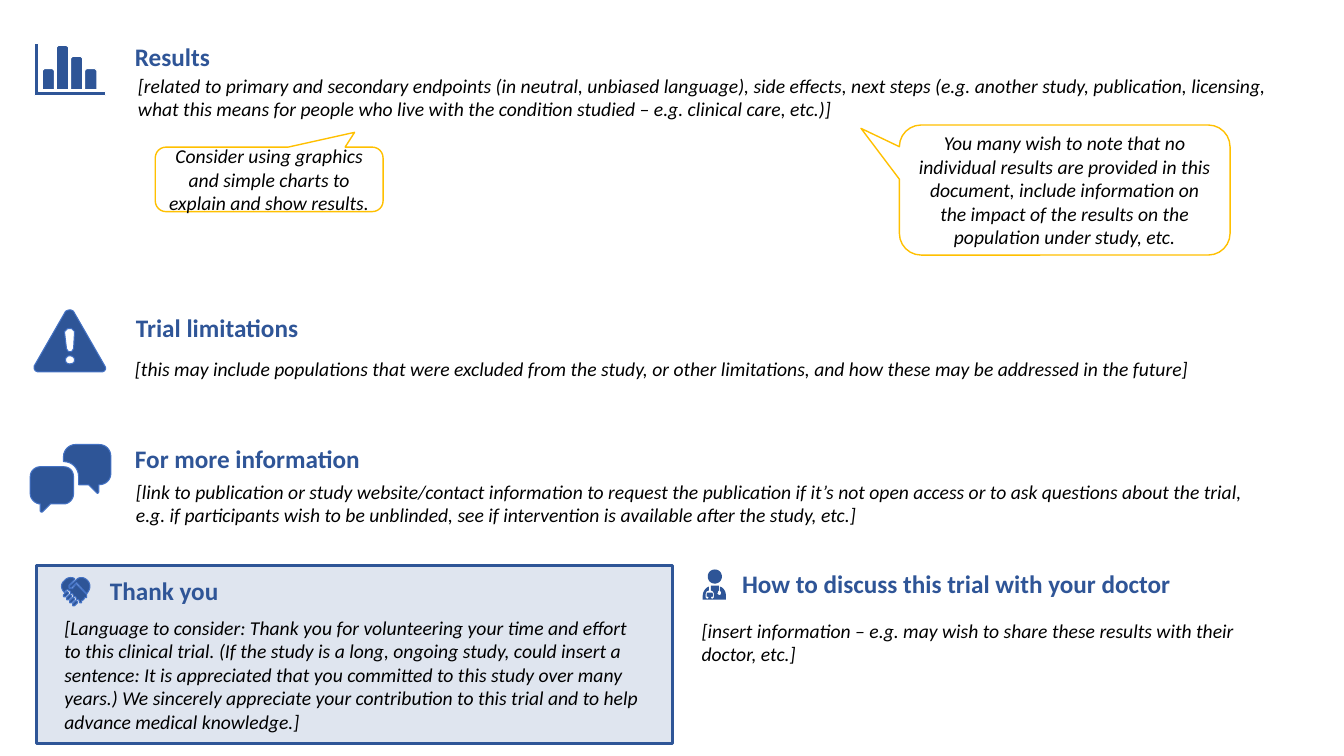
import pptx
import pptx.dml.color
import pptx.enum.shapes
import pptx.enum.text
import pptx.oxml
import pptx.oxml.ns
import pptx.util
from pptx.util import Inches

THEME = {
    "blue": pptx.dml.color.RGBColor.from_string("2E5597"),
    "edge": pptx.dml.color.RGBColor.from_string("4472C4"),
    "white": pptx.dml.color.RGBColor.from_string("FFFFFF"),
    "amber": pptx.dml.color.RGBColor.from_string("FFC000"),
    "heading": {"size": 18, "bold": True, "italic": False,
                "color": pptx.dml.color.RGBColor.from_string("2F5597")},
    "body": {"size": 14, "bold": False, "italic": True,
             "color": pptx.dml.color.RGBColor.from_string("000000")},
    "font": "Calibri",
}

presentation = pptx.Presentation()
presentation.slide_width = Inches(13.33)
presentation.slide_height = Inches(7.5)
slide = presentation.slides.add_slide(presentation.slide_layouts[6])


def write(frame, text, style):
    frame.word_wrap = True
    paragraph = frame.paragraphs[0]
    paragraph.text = text
    paragraph.font.name = THEME["font"]
    paragraph.font.size = pptx.util.Pt(style["size"])
    paragraph.font.bold = style["bold"]
    paragraph.font.italic = style["italic"]
    paragraph.font.color.rgb = style["color"]
    return paragraph


def add_outline(contours, edge=None):
    """Contours hold (x, y) points and (x1, y1, x2, y2, x, y) curves."""
    builder = None
    for start, *segments in contours:
        if builder is None:
            builder = slide.shapes.build_freeform(Inches(start[0]), Inches(start[1]))
        else:
            builder.move_to(Inches(start[0]), Inches(start[1]))
        points, pen = [], start
        for segment in segments:
            if len(segment) == 6:
                corners = [pen, segment[:2], segment[2:4], segment[4:]]
                for step in range(1, 9):
                    t = step / 8
                    weights = [(1 - t) ** 3, 3 * t * (1 - t) ** 2, 3 * t * t * (1 - t), t ** 3]
                    points.append([sum(w * c[axis] for w, c in zip(weights, corners))
                                   for axis in (0, 1)])
            else:
                points.append(segment)
            pen = segment[-2:]
        builder.add_line_segments([(Inches(x), Inches(y)) for x, y in points], close=True)
    shape = builder.convert_to_shape()
    shape.shadow.inherit = False
    shape.fill.solid()
    shape.fill.fore_color.rgb = THEME["blue"]
    if edge is None:
        shape.line.fill.background()
    else:
        shape.line.color.rgb = edge
        shape.line.width = pptx.util.Pt(0.75)
    return shape


# Thank-you card
card = slide.shapes.add_shape(pptx.enum.shapes.MSO_SHAPE.RECTANGLE,
                              Inches(0.36), Inches(5.61), Inches(6.31), Inches(1.77))
card.shadow.inherit = False
card.fill.solid()
card.fill.fore_color.rgb = THEME["blue"]
card_color = card.fill._xPr.find(".//" + pptx.oxml.ns.qn("a:srgbClr"))
card_color.append(pptx.oxml.parse_xml(
    f'<a:alpha {pptx.oxml.ns.nsdecls("a")} val="15000"/>'))
card.line.color.rgb = THEME["blue"]
card.line.width = pptx.util.Pt(2.25)

# Bar chart icon
chart_parts = [add_outline([[(0.34, 0.43), (0.38, 0.43), (0.38, 0.91), (1.05, 0.91),
                             (1.05, 0.95), (0.34, 0.95)]], THEME["white"])]
for index, top in enumerate([0.68, 0.45, 0.56, 0.68]):
    left = 0.42 + 0.14 * index
    right = left + 0.12
    chart_parts.append(add_outline(
        [[(left + 0.02, top), (left, top + 0.02), (left, 0.89),
          (right, 0.89), (right, top + 0.02), (right - 0.02, top)]], THEME["white"]))
slide.shapes.add_group_shape(chart_parts)

# Speech bubbles icon
bubbles = [
    [(0.98, 4.41), (0.75, 4.41), (0.69, 4.41, 0.63, 4.46, 0.63, 4.53), (0.63, 4.58),
     (0.72, 4.58, 0.78, 4.65, 0.78, 4.73), (0.78, 4.81), (0.88, 4.81), (0.96, 4.89),
     (0.97, 4.9, 0.98, 4.89, 0.98, 4.88), (0.98, 4.81),
     (1.05, 4.81, 1.1, 4.76, 1.1, 4.7), (1.1, 4.53), (1.1, 4.46, 1.05, 4.41, 0.98, 4.41)],
    [(0.63, 5), (0.5, 5), (0.42, 5.08), (0.41, 5.08, 0.4, 5.08, 0.4, 5.07), (0.4, 5),
     (0.35, 5, 0.3, 4.95, 0.3, 4.9), (0.3, 4.73), (0.3, 4.67, 0.35, 4.63, 0.4, 4.63),
     (0.63, 4.63), (0.69, 4.63, 0.73, 4.67, 0.73, 4.73), (0.73, 4.9),
     (0.73, 4.95, 0.69, 5, 0.63, 5)],
]
slide.shapes.add_group_shape([add_outline([bubble], THEME["edge"]) for bubble in bubbles])

# Warning icon: triangle with the exclamation mark cut out
add_outline([
    [(0.67, 3.26), (0.71, 3.26), (0.74, 3.29), (0.73, 3.46), (0.71, 3.49),
     (0.68, 3.49), (0.66, 3.46), (0.64, 3.29)],
    [(0.69, 3.53), (0.72, 3.53, 0.74, 3.55, 0.74, 3.57), (0.74, 3.6, 0.72, 3.61, 0.69, 3.61),
     (0.67, 3.61, 0.65, 3.6, 0.65, 3.57), (0.65, 3.55, 0.67, 3.53, 0.69, 3.53)],
    [(0.65, 3.09), (0.34, 3.63), (0.33, 3.66, 0.35, 3.69, 0.38, 3.69), (1.01, 3.69),
     (1.04, 3.69, 1.06, 3.66, 1.04, 3.63), (0.73, 3.09), (0.71, 3.07, 0.68, 3.07, 0.65, 3.09)],
], THEME["edge"])

# Doctor icon: coat with stethoscope, then head
coat = [
    (7.14, 5.82), (7.14, 5.86), (7.15, 5.87, 7.16, 5.88, 7.15, 5.89),
    (7.15, 5.9, 7.14, 5.91, 7.13, 5.9), (7.12, 5.9, 7.11, 5.89, 7.12, 5.88),
    (7.12, 5.87, 7.12, 5.87, 7.13, 5.86), (7.13, 5.81), (7.07, 5.81), (7.05, 5.81),
    (7.05, 5.86), (7.07, 5.86, 7.08, 5.88, 7.08, 5.89), (7.08, 5.93),
    (7.07, 5.94), (7.06, 5.94), (7.05, 5.93), (7.06, 5.92), (7.07, 5.92), (7.07, 5.89),
    (7.07, 5.88, 7.06, 5.88, 7.05, 5.88), (7.03, 5.88), (7.02, 5.88, 7.01, 5.88, 7.01, 5.89),
    (7.01, 5.92), (7.02, 5.92), (7.03, 5.93), (7.02, 5.94), (7.01, 5.94), (7, 5.93), (7, 5.89),
    (7, 5.88, 7.01, 5.86, 7.03, 5.86), (7.03, 5.82), (7, 5.83, 6.97, 5.87, 6.97, 5.91),
    (6.97, 5.95), (7.2, 5.95), (7.2, 5.91), (7.2, 5.87, 7.18, 5.83, 7.14, 5.82)]
head = [(7.16, 5.72), (7.16, 5.76, 7.13, 5.79, 7.09, 5.79), (7.05, 5.79, 7.02, 5.76, 7.02, 5.72),
        (7.02, 5.68, 7.05, 5.65, 7.09, 5.65), (7.13, 5.65, 7.16, 5.68, 7.16, 5.72)]
slide.shapes.add_group_shape([add_outline([part]) for part in (coat, head)])

# Handshake icon: two palms and four fingers
left_palm = [
    (0.76, 5.8), (0.75, 5.8), (0.72, 5.84), (0.71, 5.84, 0.7, 5.84, 0.69, 5.84),
    (0.68, 5.83, 0.68, 5.81, 0.69, 5.8), (0.74, 5.75), (0.74, 5.74),
    (0.71, 5.72, 0.66, 5.73, 0.64, 5.76), (0.6, 5.79, 0.6, 5.84, 0.64, 5.88),
    (0.65, 5.86), (0.67, 5.85), (0.69, 5.86), (0.7, 5.87), (0.7, 5.89), (0.72, 5.89),
    (0.73, 5.91), (0.73, 5.92), (0.75, 5.92), (0.76, 5.94), (0.76, 5.95), (0.78, 5.95),
    (0.79, 5.97), (0.79, 5.98), (0.81, 5.98), (0.81, 5.96), (0.83, 5.95), (0.84, 5.93),
    (0.86, 5.93), (0.86, 5.9)]
right_palm = [
    (0.87, 5.76), (0.85, 5.74, 0.83, 5.73, 0.81, 5.73), (0.8, 5.73, 0.79, 5.73, 0.77, 5.74),
    (0.75, 5.76), (0.69, 5.81), (0.69, 5.83), (0.71, 5.83), (0.76, 5.78), (0.86, 5.89),
    (0.87, 5.88), (0.9, 5.84, 0.9, 5.79, 0.87, 5.76)]
fingers = []
for index in range(4):
    x, y = 0.63 + 0.03 * index, 5.87 + 0.03 * index
    fingers.append([(x + 0.04, y), (x + 0.03, y), (x, y + 0.03), (x, y + 0.05),
                    (x + 0.02, y + 0.05), (x + 0.05, y + 0.02), (x + 0.05, y + 0.01)])
slide.shapes.add_group_shape([add_outline([part], THEME["edge"])
                              for part in [left_palm, *fingers, right_palm]])

# Callouts
callouts = [
    (8.92, 1.24, 3.28, 1.29, (-0.616, -0.474),
     "You many wish to note that no individual results are provided in this document, "
     "include information on the impact of the results on the population under study, etc."),
    (1.54, 1.46, 2.26, 0.64, (0.375, -0.729),
     "Consider using graphics and simple charts to explain and show results."),
]
for left, top, width, height, tip, text in callouts:
    callout = slide.shapes.add_shape(pptx.enum.shapes.MSO_SHAPE.ROUNDED_RECTANGULAR_CALLOUT,
                                     Inches(left), Inches(top), Inches(width), Inches(height))
    callout.adjustments[0], callout.adjustments[1] = tip
    callout.shadow.inherit = False
    callout.fill.solid()
    callout.fill.fore_color.rgb = THEME["white"]
    callout.line.color.rgb = THEME["amber"]
    callout.line.width = pptx.util.Pt(1)
    callout.text_frame.vertical_anchor = pptx.enum.text.MSO_ANCHOR.MIDDLE
    paragraph = write(callout.text_frame, text, THEME["body"])
    paragraph.alignment = pptx.enum.text.PP_ALIGN.CENTER

# Headings and body texts: left, top, width, height, left inset, style, text
texts = [
    (1.24, 0.36, 10.96, 0.4, 0.1, "heading", "Results"),
    (1.27, 0.68, 11.51, 0.57, 0.1, "body",
     "[related to primary and secondary endpoints (in neutral, unbiased language), side effects, "
     "next steps (e.g. another study, publication, licensing, what this means for people who live "
     "with the condition studied – e.g. clinical care, etc.)]"),
    (1.25, 3.05, 10.96, 0.4, 0.1, "heading", "Trial limitations"),
    (1.24, 3.49, 11.48, 0.34, 0.1, "body",
     "[this may include populations that were excluded from the study, or other limitations, "
     "and how these may be addressed in the future]"),
    (1.24, 4.35, 11.51, 0.4, 0.1, "heading", "For more information"),
    (1.25, 4.71, 11.46, 0.57, 0.1, "body",
     "[link to publication or study website/contact information to request the publication if it’s "
     "not open access or to ask questions about the trial, e.g. if participants wish to be "
     "unblinded, see if intervention is available after the study, etc.]"),
    (0.54, 5.66, 6.05, 0.4, 0.55, "heading", "Thank you"),
    (0.54, 6.06, 5.93, 1.28, 0.1, "body",
     "[Language to consider: Thank you for volunteering your time and effort to this clinical "
     "trial. (If the study is a long, ongoing study, could insert a sentence: It is appreciated "
     "that you committed to this study over many years.) We sincerely appreciate your "
     "contribution to this trial and to help advance medical knowledge.]"),
    (6.86, 5.59, 5.91, 0.4, 0.5, "heading", "How to discuss this trial with your doctor"),
    (6.86, 6.09, 5.85, 0.57, 0.1, "body",
     "[insert information – e.g. may wish to share these results with their doctor, etc.]"),
]
for left, top, width, height, inset, style, text in texts:
    box = slide.shapes.add_textbox(Inches(left), Inches(top), Inches(width), Inches(height))
    box.text_frame.margin_left = Inches(inset)
    box.text_frame.auto_size = pptx.enum.text.MSO_AUTO_SIZE.SHAPE_TO_FIT_TEXT
    write(box.text_frame, text, THEME[style])

presentation.save("out.pptx")
